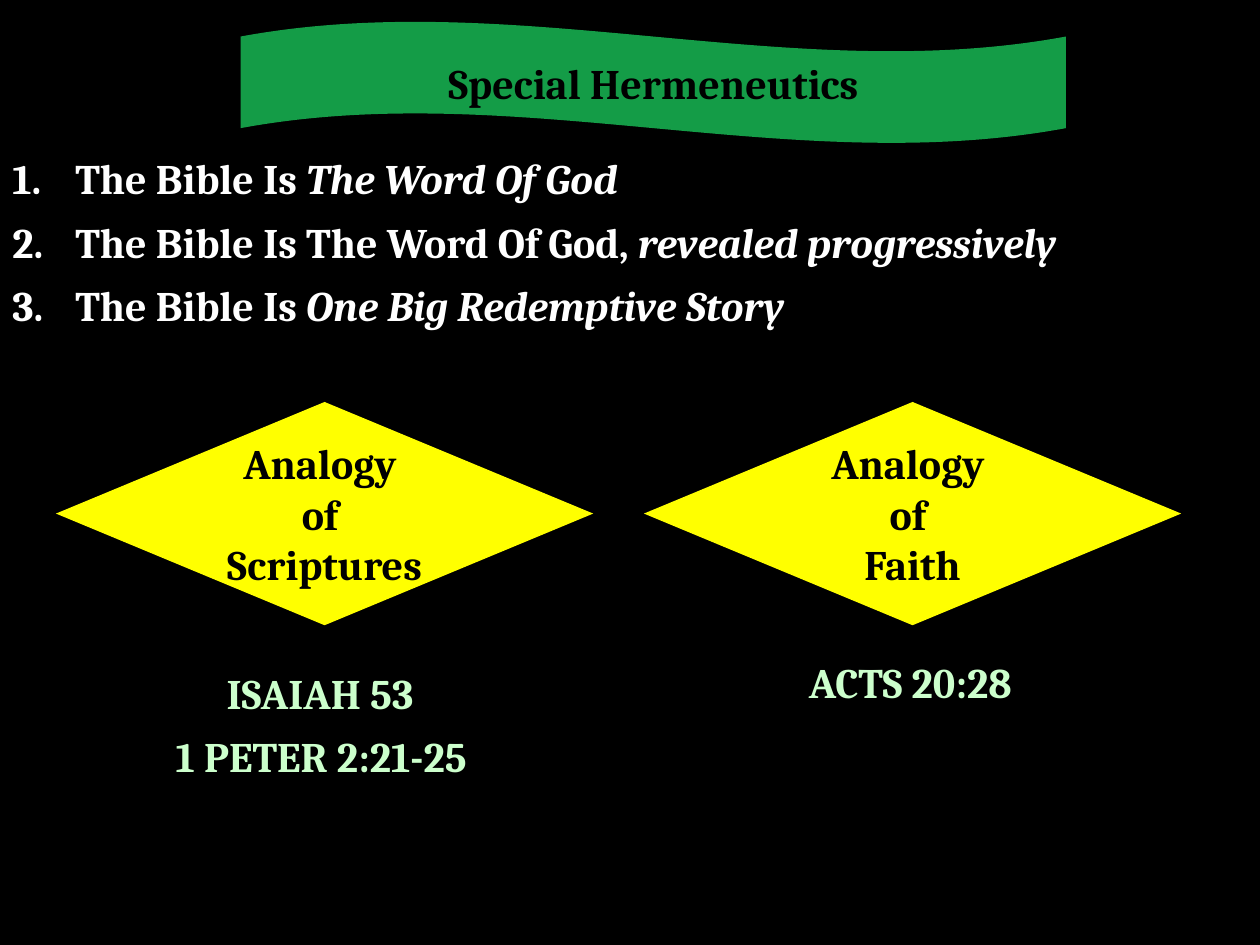
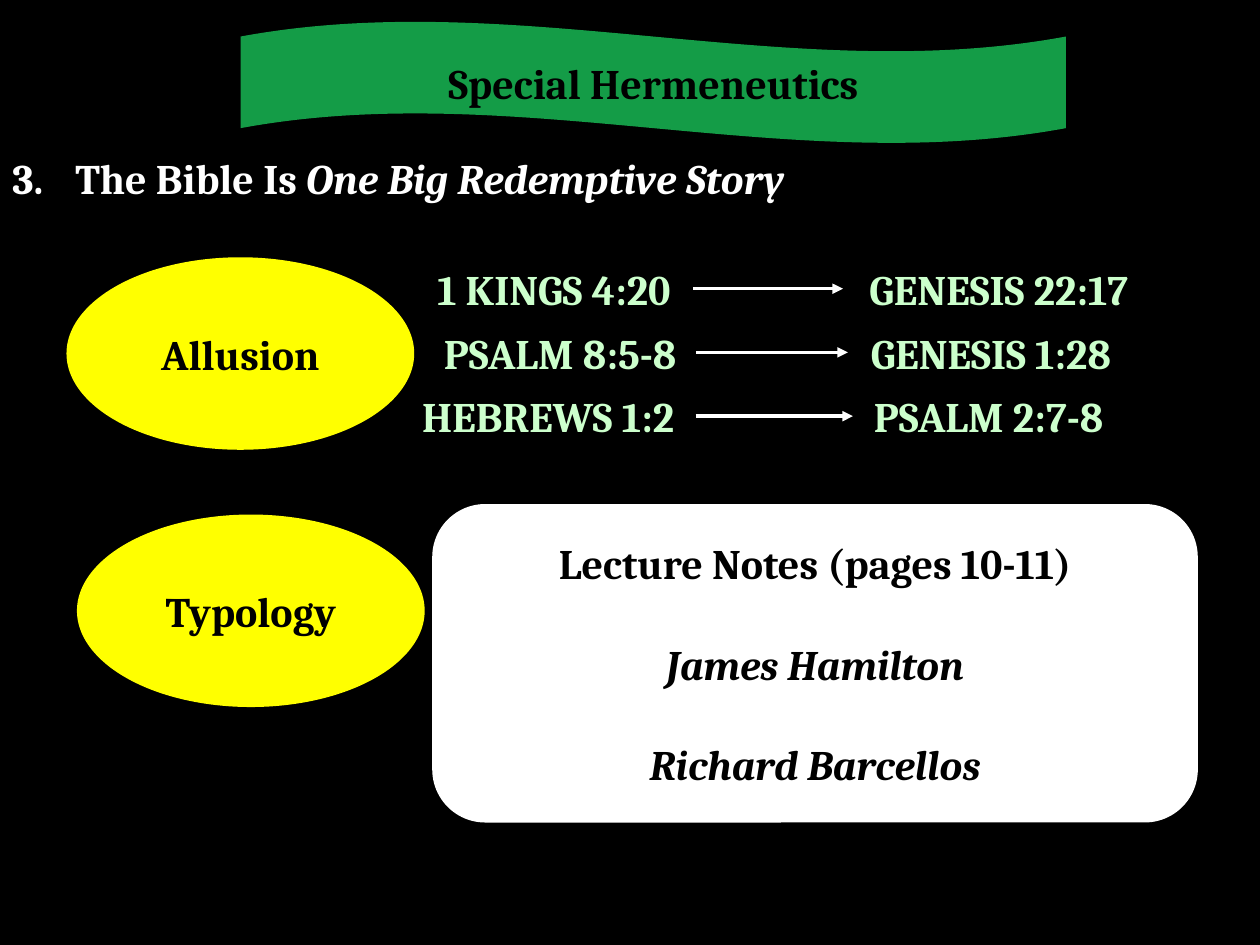
"""Build two slides on special hermeneutics: the analogies, then allusion and typology."""
from pptx import Presentation
from pptx.dml.color import RGBColor
from pptx.enum.shapes import MSO_CONNECTOR, MSO_SHAPE
from pptx.enum.text import MSO_ANCHOR, MSO_AUTO_SIZE, PP_ALIGN
from pptx.oxml.ns import qn
from pptx.util import Pt
from lxml import etree

BLACK = RGBColor(0x00, 0x00, 0x00)
WHITE = RGBColor(0xFF, 0xFF, 0xFF)
GREEN = RGBColor(0x14, 0x9C, 0x47)
YELLOW = RGBColor(0xFF, 0xFF, 0x00)
MINT = RGBColor(0xCC, 0xFF, 0xCC)

FONT = "Cambria"
FONT_SIZE = 24
LINE_HEIGHT = 36
TITLE_ONLY = 5
LEFT_SIDE, RIGHT_SIDE = 1, 3

CENTER, JUSTIFY = PP_ALIGN.CENTER, PP_ALIGN.JUSTIFY
MIDDLE = MSO_ANCHOR.MIDDLE
FIT_TEXT, NO_FIT = MSO_AUTO_SIZE.SHAPE_TO_FIT_TEXT, MSO_AUTO_SIZE.NONE
WAVE, DIAMOND, OVAL = MSO_SHAPE.WAVE, MSO_SHAPE.DIAMOND, MSO_SHAPE.OVAL
ROUNDED = MSO_SHAPE.ROUNDED_RECTANGLE
STRAIGHT = MSO_CONNECTOR.STRAIGHT

TITLE = "Special Hermeneutics"
BANNER = (137.5, 12.2, 471.6, 69.8)
POINTS_TOP, POINTS_PITCH = 83.5, 36.4
POINTS = [
    ("The Bible Is ", "The Word Of God"),
    ("The Bible Is The Word Of God, ", "revealed progressively"),
    ("The Bible Is ", "One Big Redemptive Story"),
]
ANALOGIES = [(32, "Scriptures"), (368, "Faith")]
ANALOGY_VERSES = [
    ("ISAIAH 53", 119.5, 378, 126.7),
    ("1 PETER 2:21-25", 83, 414, 201),
    ("ACTS 20:28", 449.3, 371.5, 141.8),
]
ALLUSIONS_TOP, ALLUSIONS_PITCH = 147, 36.4
ALLUSIONS = [
    (("1 KINGS 4:20", 237, 159), ("GENESIS 22:17", 481.7, 178)),
    (("PSALM 8:5-8", 242.6, 155), ("GENESIS 1:28", 484.5, 163.4)),
    (("HEBREWS 1:2", 229, 168.5), ("PSALM 2:7-8", 487.4, 155)),
]
THEMES = [("Allusion", 38, 147), ("Typology", 44, 294)]
LECTURE_NOTES = [
    [("Lecture Notes (pages 10-11)", False)],
    [("James Hamilton", True)],
    [("Richard Barcellos", True)],
]


def add_text(box, paragraphs, color=BLACK, align=CENTER, anchor=MIDDLE,
             wrap=True, fit=NO_FIT, gap=0, hanging=0):
    """Fill a box with paragraphs, each a list of (text, italic) spans."""
    frame = box.text_frame
    frame.word_wrap = wrap
    frame.auto_size = fit
    frame.vertical_anchor = anchor
    for index, spans in enumerate(paragraphs):
        para = frame.paragraphs[0] if index == 0 else frame.add_paragraph()
        para.alignment = align
        para.space_before = Pt(gap if index else 0)
        if hanging:
            properties = para._p.get_or_add_pPr()
            properties.set("marL", str(Pt(hanging)))
            properties.set("indent", str(-Pt(hanging)))
        for text, italic in spans:
            span = para.add_run()
            span.text = text
            span.font.name = FONT
            span.font.size = Pt(FONT_SIZE)
            span.font.bold = True
            span.font.italic = italic
            span.font.color.rgb = color


def add_figure(page, kind, left, top, width, height, fill):
    """Add a plain filled shape without line or shadow."""
    figure = page.shapes.add_shape(kind, Pt(left), Pt(top), Pt(width), Pt(height))
    figure.shadow.inherit = False
    figure.fill.solid()
    figure.fill.fore_color.rgb = fill
    figure.line.fill.background()
    return figure


def add_page(deck):
    """Add a slide with the title on its green wave."""
    page = deck.slides.add_slide(deck.slide_layouts[TITLE_ONLY])
    add_figure(page, WAVE, *BANNER, GREEN)
    title = page.shapes.title
    title.left, title.top, title.width, title.height = map(Pt, BANNER)
    add_text(title, [[(TITLE, False)]])
    page.shapes._spTree.append(title._element)
    return page


def add_point(page, number, row):
    """Add one numbered point with its italic ending."""
    plain, stressed = POINTS[number - 1]
    top = POINTS_TOP + row * POINTS_PITCH
    box = page.shapes.add_textbox(0, Pt(top), Pt(720), Pt(LINE_HEIGHT))
    add_text(box, [[(f"{number}.\t{plain}", False), (stressed, True)]],
             color=WHITE, align=JUSTIFY, anchor=MSO_ANCHOR.TOP,
             fit=FIT_TEXT, hanging=36)


def add_verse(page, text, left, top, width):
    """Add a Bible reference and return its box."""
    box = page.shapes.add_textbox(Pt(left), Pt(top), Pt(width), Pt(LINE_HEIGHT))
    add_text(box, [[(text, False)]], color=MINT, anchor=MSO_ANCHOR.TOP,
             wrap=False, fit=FIT_TEXT)
    return box


def add_arrow(page, source, target):
    """Join two references with a white arrow."""
    arrow = page.shapes.add_connector(STRAIGHT, 0, 0, 0, 0)
    arrow.begin_connect(source, RIGHT_SIDE)
    arrow.end_connect(target, LEFT_SIDE)
    arrow.line.color.rgb = WHITE
    arrow.line.width = Pt(2)
    etree.SubElement(arrow.line._get_or_add_ln(), qn("a:tailEnd"), type="triangle")
    etree.SubElement(arrow._element.spPr, qn("a:effectLst"))


def build_analogies(deck):
    """Build the slide with the three points and two analogies."""
    page = add_page(deck)
    for row in range(len(POINTS)):
        add_point(page, row + 1, row)
    for left, subject in ANALOGIES:
        diamond = add_figure(page, DIAMOND, left, 229.7, 307, 127.6, YELLOW)
        add_text(diamond, [[(line, False)] for line in ("Analogy ", "of ", subject)])
    for verse in ANALOGY_VERSES:
        add_verse(page, *verse)


def build_allusion_and_typology(deck):
    """Build the slide with the linked verses and the lecture notes."""
    page = add_page(deck)
    add_point(page, 3, 0)
    for row, pair in enumerate(ALLUSIONS):
        top = ALLUSIONS_TOP + row * ALLUSIONS_PITCH
        source, target = [add_verse(page, text, left, top, width)
                          for text, left, width in pair]
        add_arrow(page, source, target)
    for name, left, top in THEMES:
        oval = add_figure(page, OVAL, left, top, 198.7, 110, YELLOW)
        add_text(oval, [[(name, False)]])
    notes = add_figure(page, ROUNDED, 247, 288, 437.5, 182, WHITE)
    add_text(notes, LECTURE_NOTES, gap=28.8)


def main():
    """Build and save the deck."""
    deck = Presentation()
    deck.slide_width, deck.slide_height = Pt(720), Pt(540)
    background = deck.slide_master.background.fill
    background.solid()
    background.fore_color.rgb = BLACK
    build_analogies(deck)
    build_allusion_and_typology(deck)
    deck.save("out.pptx")


if __name__ == "__main__":
    main()
